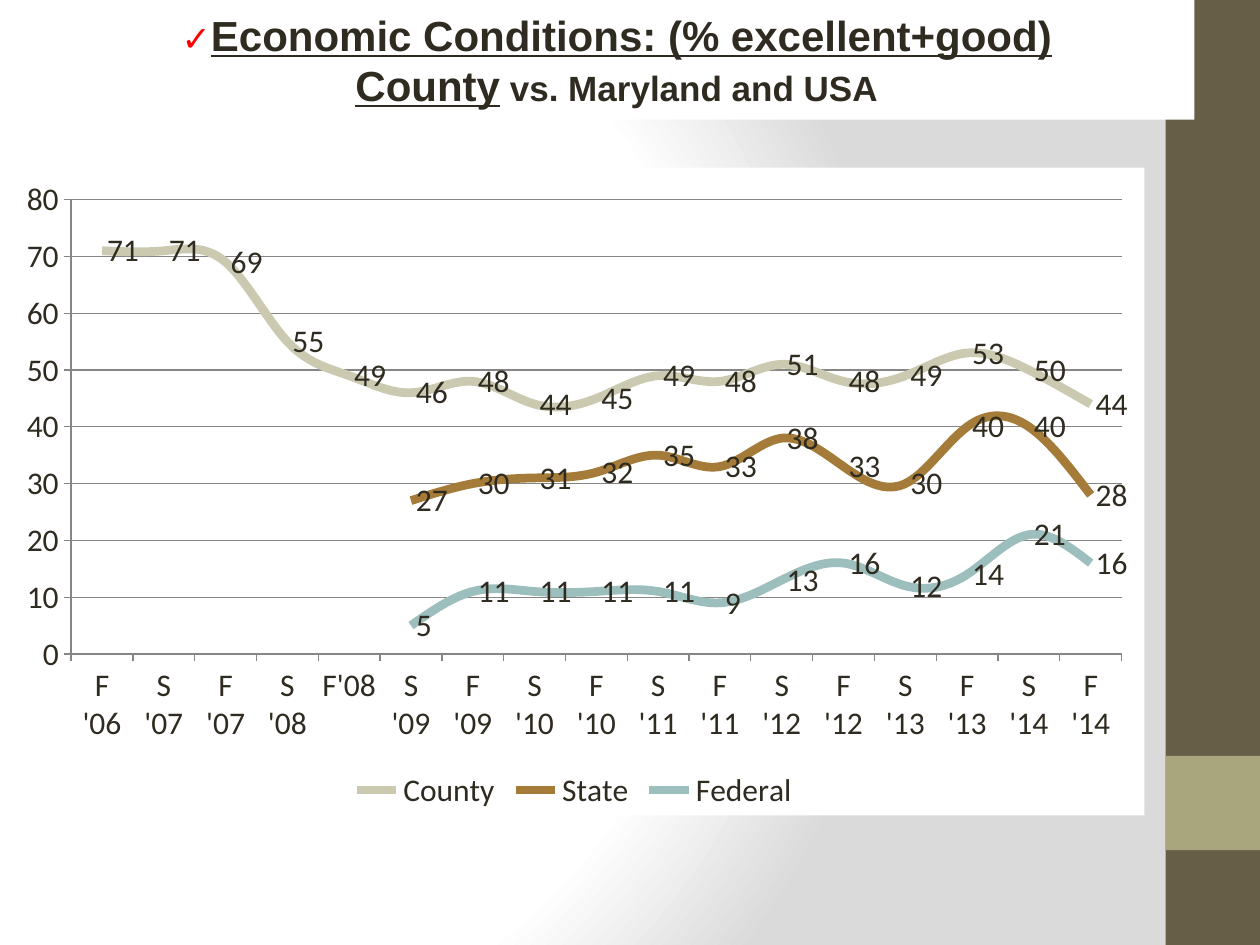
from pptx import Presentation
from pptx import util as u
from pptx.chart.data import CategoryChartData
from pptx.dml.color import RGBColor
from pptx.enum import chart as charts, shapes, text
from pptx.oxml import parse_xml
from pptx.oxml.ns import nsdecls

COLORS = {
    "white": "FFFFFF", "shade": "DADADA", "ink": "2F2B20", "check": "FF0000",
    "bar": "675E47", "accent": "A9A57C", "grid": "868686",
    "County": "CBC9B0", "State": "A47B38", "Federal": "9CBEBD",
}
SEASONS = ["F '06", "S '07", "F '07", "S '08", "F'08"] + [
    f"{season} '{year:02}" for year in range(9, 15) for season in "SF"]
RATINGS = {
    "County": [71, 71, 69, 55, 49, 46, 48, 44, 45, 49, 48, 51, 48, 49, 53, 50, 44],
    "State": [None] * 5 + [27, 30, 31, 32, 35, 33, 38, 33, 30, 40, 40, 28],
    "Federal": [None] * 5 + [5, 11, 11, 11, 11, 9, 13, 16, 12, 14, 21, 16],
}
# Each run: wording, size, colour, underline
TITLE = [
    [("✓", 20, "check", False),
     ("Economic Conditions: (% excellent+good)", 24, "ink", True)],
    [("County", 24, "ink", True), (" vs. Maryland and USA", 20, "ink", False)],
]


def rgb(name):
    return RGBColor.from_string(COLORS[name])


class SlideBuilder:
    title_font = "Arial"
    chart_font = "Calibri"

    def __init__(self, slide):
        self.slide = slide

    def background(self):
        stops = "".join(
            f'<a:gs pos="{position}"><a:srgbClr val="{COLORS[name]}"/></a:gs>'
            for position, name in ((0, "white"), (75000, "white"), (100000, "shade")))
        self.slide.element.cSld.insert(0, parse_xml(
            f'<p:bg {nsdecls("p", "a")}><p:bgPr><a:gradFill rotWithShape="1">'
            f'<a:gsLst>{stops}</a:gsLst><a:path path="circle">'
            '<a:fillToRect l="20000" t="50000" r="100000" b="50000"/></a:path>'
            '</a:gradFill><a:effectLst/></p:bgPr></p:bg>'))

    def block(self, left, top, width, height, color):
        shape = self.slide.shapes.add_shape(
            shapes.MSO_SHAPE.RECTANGLE, u.Cm(left), u.Cm(top), u.Cm(width), u.Cm(height))
        shape.shadow.inherit = False
        shape.fill.solid()
        shape.fill.fore_color.rgb = rgb(color)
        shape.line.fill.background()

    def title(self, left, top, width, height, lines):
        shape = self.slide.shapes.title
        shape.left, shape.top = u.Cm(left), u.Cm(top)
        shape.width, shape.height = u.Cm(width), u.Cm(height)
        shape.fill.solid()
        shape.fill.fore_color.rgb = rgb("white")
        frame = shape.text_frame
        frame.auto_size = text.MSO_AUTO_SIZE.NONE
        frame.vertical_anchor = text.MSO_ANCHOR.MIDDLE
        for index, line in enumerate(lines):
            paragraph = frame.add_paragraph() if index else frame.paragraphs[0]
            paragraph.alignment = text.PP_ALIGN.CENTER
            for wording, size, color, underline in line:
                run = paragraph.add_run()
                run.text = wording
                run.font.name, run.font.size = self.title_font, u.Pt(size)
                run.font.bold, run.font.underline = True, underline
                run.font.color.rgb = rgb(color)
        # The title lies over the side bar
        self.slide.shapes.element.append(shape.element)

    def line_chart(self, left, top, width, height, categories, ratings):
        data = CategoryChartData()
        data.categories = categories
        for name, values in ratings.items():
            data.add_series(name, values)
        chart = self.slide.shapes.add_chart(
            charts.XL_CHART_TYPE.LINE, u.Cm(left), u.Cm(top),
            u.Cm(width), u.Cm(height), data).chart
        chart.has_title = False
        chart.font.name, chart.font.size = self.chart_font, u.Pt(18)
        chart.font.color.rgb = rgb("ink")
        chart.has_legend = True
        chart.legend.position = charts.XL_LEGEND_POSITION.BOTTOM
        chart.legend.include_in_layout = False

        # Axes and gridlines
        chart.value_axis.minimum_scale = 0
        chart.value_axis.maximum_scale = 80
        chart.value_axis.major_unit = 10
        chart.value_axis.has_major_gridlines = True
        for axis in (chart.value_axis, chart.category_axis):
            axis.major_tick_mark = charts.XL_TICK_MARK.OUTSIDE
            axis.format.line.color.rgb = rgb("grid")
        chart.value_axis.major_gridlines.format.line.color.rgb = rgb("grid")

        # Lines with value labels
        plot = chart.plots[0]
        plot.vary_by_categories = False
        for series in plot.series:
            series.smooth = True
            series.marker.style = charts.XL_MARKER_STYLE.NONE
            series.format.line.color.rgb = rgb(series.name)
            series.format.line.width = u.Pt(5)
            series.data_labels.show_value = True
            series.data_labels.position = charts.XL_LABEL_POSITION.RIGHT

        # White chart area
        chart.element.find("{*}chart").addnext(parse_xml(
            f'<c:spPr {nsdecls("c", "a")}><a:solidFill><a:srgbClr val="{COLORS["white"]}"/>'
            '</a:solidFill><a:ln><a:noFill/></a:ln></c:spPr>'))


def main():
    presentation = Presentation()
    presentation.slide_width, presentation.slide_height = u.Cm(25.4), u.Cm(19.05)
    builder = SlideBuilder(presentation.slides.add_slide(presentation.slide_layouts[5]))

    # Backdrop and side bar
    builder.background()
    builder.block(23.5, 0, 1.9, 19.05, "bar")
    builder.block(23.5, 15.24, 1.9, 1.9, "accent")

    # Title and chart
    builder.title(0.79, 0, 23.29, 2.41, TITLE)
    builder.line_chart(0.08, 3.38, 22.99, 13.06, SEASONS, RATINGS)
    presentation.save("out.pptx")


if __name__ == "__main__":
    main()
